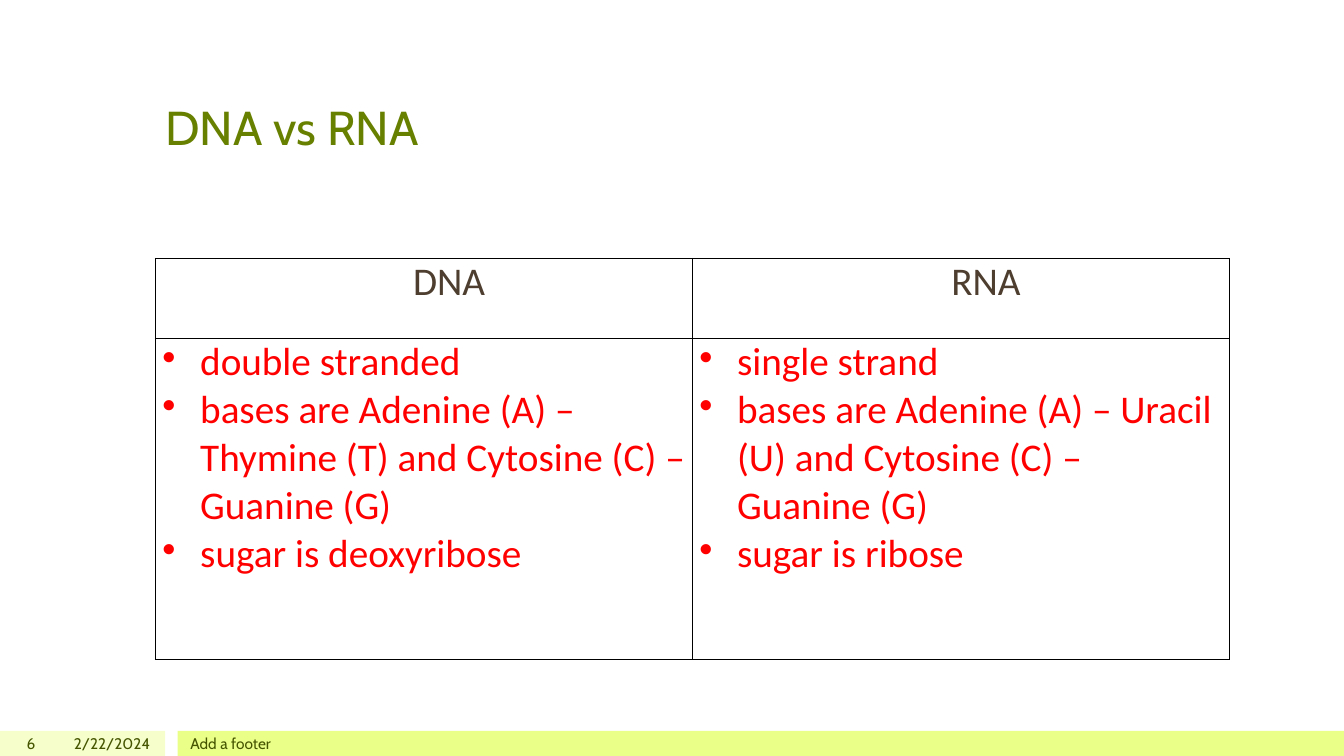
from lxml import etree
from pptx import Presentation
from pptx import util as u
from pptx.dml.color import RGBColor
from pptx.enum import shapes, text
from pptx.oxml.ns import qn

Pt = u.Pt
HUES = {"title": "688000", "head": "4D3E2F", "body": "FF0000", "foot": "455500",
        "pale": "F6FFCC", "lime": "E9FF88", "line": "000000"}
LEFT, MID, RIGHT = text.PP_ALIGN.LEFT, text.PP_ALIGN.CENTER, text.PP_ALIGN.RIGHT


def style(para, size, face, hue, align=LEFT):
    para.alignment = align
    for key, val in {"size": Pt(size), "name": face, "bold": False}.items():
        setattr(para.font, key, val)
    para.font.color.rgb = RGBColor.from_string(HUES[hue])


def border(cell):
    props = cell._tc.get_or_add_tcPr()
    for spot, side in enumerate(("lnL", "lnR", "lnT", "lnB")):
        line = etree.Element(qn("a:" + side), w=str(Pt(1)))
        fill = etree.SubElement(line, qn("a:solidFill"))
        etree.SubElement(fill, qn("a:srgbClr"), val=HUES["line"])
        props.insert(spot, line)


deck = Presentation()
deck.slide_width, deck.slide_height = Pt(960), Pt(540)
slide = deck.slides.add_slide(deck.slide_layouts[5])

# Footer bands
for left, width, hue in ((0, 118, "pale"), (126.9, 833.1, "lime")):
    band = slide.shapes.add_shape(
        shapes.MSO_SHAPE.RECTANGLE, Pt(left), Pt(522), Pt(width), Pt(18))
    band.shadow.inherit = False
    band.fill.solid()
    band.fill.fore_color.rgb = RGBColor.from_string(HUES[hue])
    band.line.fill.background()

# Title
title = slide.shapes.title
for key, val in {"left": 111, "top": 21.6, "width": 738, "height": 92.9}.items():
    setattr(title, key, Pt(val))
frame = title.text_frame
frame.text = "DNA vs RNA"
frame.auto_size = text.MSO_AUTO_SIZE.NONE
frame.vertical_anchor = text.MSO_ANCHOR.BOTTOM
style(frame.paragraphs[0], 34, "Cabin", "title")

# Comparison table
facts = {
    "DNA": ["double stranded",
            "bases are Adenine (A) – Thymine (T) and Cytosine (C) – Guanine (G)",
            "sugar is deoxyribose"],
    "RNA": ["single strand",
            "bases are Adenine (A) – Uracil (U) and Cytosine (C) – Guanine (G)",
            "sugar is ribose"],
}
table = slide.shapes.add_table(2, 2, Pt(111), Pt(184.6), Pt(767), Pt(286.6)).table
table.rows[0].height, table.rows[1].height = Pt(57.3), Pt(229.3)
for col, (name, points) in enumerate(facts.items()):
    table.columns[col].width = Pt(383.5)
    for row, lines in enumerate(([name], points)):
        cell = table.cell(row, col)
        for key, val in {"left": 5, "right": 5, "top": 0, "bottom": 0}.items():
            setattr(cell, "margin_" + key, Pt(val))
        cell.fill.background()
        border(cell)
        cell.text_frame.text = "\n".join(lines)
        for para in cell.text_frame.paragraphs:
            props = para._p.get_or_add_pPr()
            if row == 0:
                style(para, 28, "Calibri", "head", MID)
                props.set("marL", str(Pt(36)))
            else:
                style(para, 28, "Calibri", "body")
                props.set("marL", str(Pt(27)))
                props.set("indent", str(Pt(-27)))
                mark = etree.Element(qn("a:buChar"), char="•")
                props.insert(0, mark)

# Footer texts
for words, left, width, align in (("6", 0, 32.4, RIGHT),
                                  ("2/22/2024", 36, 78.5, RIGHT),
                                  ("Add a footer", 128.9, 720, LEFT)):
    box = slide.shapes.add_textbox(Pt(left), Pt(522), Pt(width), Pt(18))
    frame = box.text_frame
    frame.word_wrap = True
    frame.vertical_anchor = text.MSO_ANCHOR.MIDDLE
    frame.text = words
    style(frame.paragraphs[0], 11, "Cabin", "foot", align)

deck.save("out.pptx")
